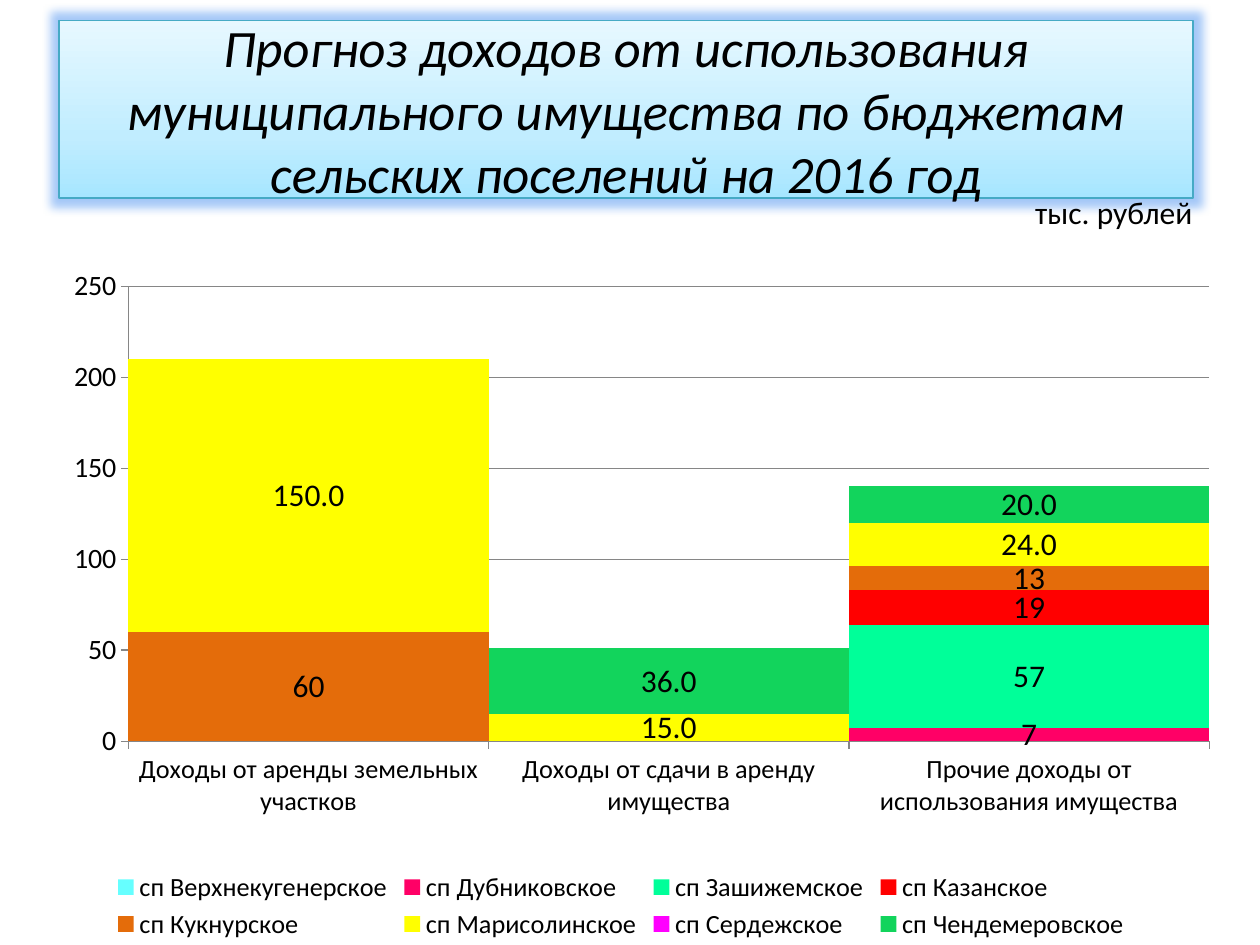
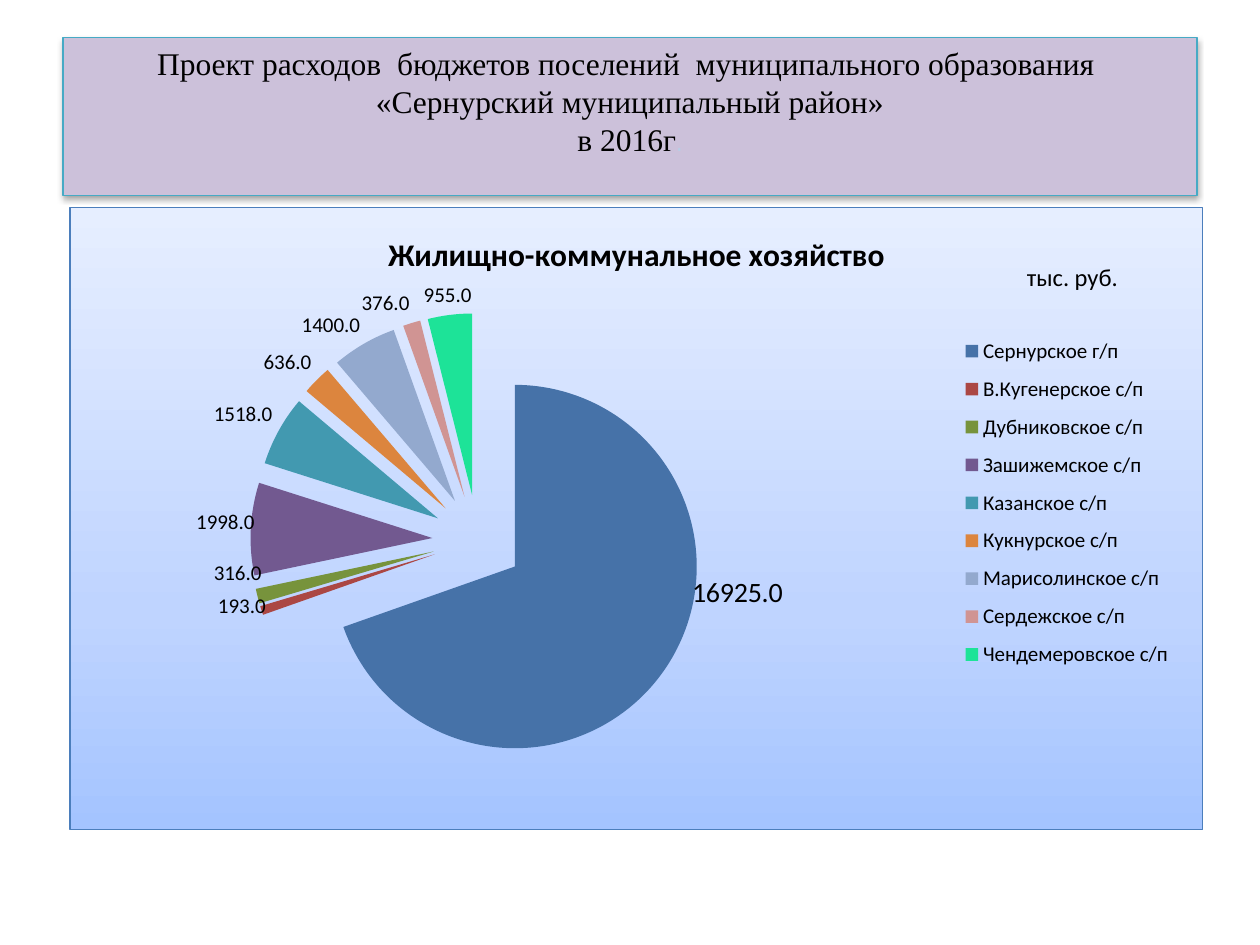
"""Build two budget slides: property income by settlement and housing expenses."""
from lxml import etree
from pptx import Presentation
from pptx.chart.data import CategoryChartData
from pptx.dml.color import RGBColor
from pptx.enum.chart import XL_CHART_TYPE, XL_LABEL_POSITION, XL_LEGEND_POSITION, XL_TICK_MARK
from pptx.enum.text import MSO_ANCHOR, PP_ALIGN
from pptx.oxml import parse_xml
from pptx.oxml.ns import nsdecls, qn
from pptx.util import Cm, Pt

STACKED = XL_CHART_TYPE.COLUMN_STACKED
PIE = XL_CHART_TYPE.PIE
OUTSIDE_END = XL_LABEL_POSITION.OUTSIDE_END
LEGEND_BOTTOM = XL_LEGEND_POSITION.BOTTOM
LEGEND_RIGHT = XL_LEGEND_POSITION.RIGHT
TICK_OUTSIDE = XL_TICK_MARK.OUTSIDE
TOP, MIDDLE = MSO_ANCHOR.TOP, MSO_ANCHOR.MIDDLE
CENTER, LEFT = PP_ALIGN.CENTER, PP_ALIGN.LEFT

BLACK = RGBColor(0x00, 0x00, 0x00)
TEAL = RGBColor(0x46, 0xAA, 0xC5)
LILAC = RGBColor(0xCC, 0xC1, 0xDA)
PALE_BLUE = RGBColor(0xB9, 0xCD, 0xE5)
AXIS_GREY = RGBColor(0x86, 0x86, 0x86)
FRAME_BLUE = RGBColor(0x4B, 0x7E, 0xBC)
SKY_STOPS = [(0, "A7E6FF"), (35, "C1EDFF"), (100, "E7F8FF")]
BLUE_STOPS = [(0, "A4C4FF"), (35, "BFD4FF"), (100, "E6EEFF")]
GLOW = '<a:glow rad="139700"><a:srgbClr val="4A90F0"><a:alpha val="50000"/></a:srgbClr></a:glow>'
SHADOW = ('<a:outerShdw blurRad="39370" dist="22860" dir="5400000" rotWithShape="0">'
          '<a:srgbClr val="000000"><a:alpha val="35000"/></a:srgbClr></a:outerShdw>')

INCOME_SOURCES = ["Доходы от аренды земельных участков",
                  "Доходы от сдачи в аренду имущества",
                  "Прочие доходы от использования имущества"]
INCOME = [
    ("сп Верхнекугенерское", (None, None, None), "66FFFF", "General"),
    ("сп Дубниковское", (None, None, 7), "FF0066", "General"),
    ("сп Зашижемское", (None, None, 57), "00FF99", "General"),
    ("сп Казанское", (None, None, 19), "FF0000", "General"),
    ("сп Кукнурское", (60, None, 13), "E46C0A", "General"),
    ("сп Марисолинское", (150, 15, 24), "FFFF00", "0.0"),
    ("сп Сердежское", (None, None, None), "FF00FF", "General"),
    ("сп Чендемеровское", (None, 36, 20), "12D45C", "0.0"),
]
EXPENSES = [
    ("Сернурское г/п", 16925, "4672A8"),
    ("В.Кугенерское с/п", 193, "AB4744"),
    ("Дубниковское с/п", 316, "77933C"),
    ("Зашижемское с/п", 1998, "725990"),
    ("Казанское с/п", 1518, "4299B0"),
    ("Кукнурское с/п", 636, "DC853E"),
    ("Марисолинское с/п", 1400, "93A9CE"),
    ("Сердежское с/п", 376, "D09493"),
    ("Чендемеровское с/п", 955, "1DE398"),
]
LABEL_SHIFTS = {0: (0.02, -0.16), 1: (0.01, -0.03), 2: (0.01, -0.06),
                3: (0.01, -0.01), 8: (0.02, 0)}


def style_font(font, size, name="Calibri", color=BLACK, bold=False, italic=False):
    """Apply one text format to a font."""
    font.size, font.name = Pt(size), name
    font.bold, font.italic = bold, italic
    font.color.rgb = color


def write(paragraph, text, align=LEFT, **style):
    """Add text to a paragraph, with newlines as line breaks."""
    paragraph.alignment = align
    for index, line in enumerate(text.split("\n")):
        if index:
            paragraph.add_line_break()
        run = paragraph.add_run()
        run.text = line
        style_font(run.font, **style)


def gradient(stops):
    """Return an upward gradient fill element."""
    marks = "".join(f'<a:gs pos="{pos * 1000}"><a:srgbClr val="{color}"/></a:gs>'
                    for pos, color in stops)
    return parse_xml(f'<a:gradFill {nsdecls("a")} rotWithShape="1"><a:gsLst>{marks}</a:gsLst>'
                     '<a:lin ang="16200000" scaled="0"/></a:gradFill>')


def title_band(slide, box, effect, anchor):
    """Place the title as a bordered band and return its first paragraph."""
    band = slide.shapes.title
    band.left, band.top, band.width, band.height = map(Cm, box)
    band.line.color.rgb = TEAL
    band.line.width = Pt(0.75)
    band._element.spPr.append(
        parse_xml(f'<a:effectLst {nsdecls("a")}>{effect}</a:effectLst>'))
    band.text_frame.word_wrap = True
    band.text_frame.vertical_anchor = anchor
    return band.text_frame.paragraphs[0]


def unit_note(slide, text, box, size, wrap):
    """Add the note that names the unit of measure."""
    frame = slide.shapes.add_textbox(*map(Cm, box)).text_frame
    frame.word_wrap = wrap
    write(frame.paragraphs[0], text, size=size)


def add_chart(slide, kind, box, categories, series, size):
    """Add a chart with its base font."""
    data = CategoryChartData()
    data.categories = categories
    for name, values in series:
        data.add_series(name, values)
    chart = slide.shapes.add_chart(kind, *map(Cm, box), data).chart
    style_font(chart.font, size)
    return chart


def add_legend(chart, position, size):
    """Show the legend beside the plot."""
    chart.has_legend = True
    chart.legend.position = position
    chart.legend.include_in_layout = False
    style_font(chart.legend.font, size)


def set_layout(parent, index, inner=False, **places):
    """Give a chart part a manual layout from fractions of the chart."""
    for old in parent.findall(qn("c:layout")):
        parent.remove(old)
    layout = parse_xml(f'<c:layout {nsdecls("c")}><c:manualLayout/></c:layout>')
    settings = {"layoutTarget": "inner"} if inner else {}
    if "w" in places:
        settings.update(xMode="edge", yMode="edge")
    settings.update(places)
    for tag, value in settings.items():
        etree.SubElement(layout[0], qn(f"c:{tag}")).set("val", str(value))
    parent.insert(index, layout)


def style_axis(axis, size):
    """Format an axis line, its ticks and its labels."""
    axis.major_tick_mark = TICK_OUTSIDE
    axis.format.line.color.rgb = AXIS_GREY
    style_font(axis.tick_labels.font, size)


def show_labels(labels, size, number_format):
    """Show values as data labels."""
    labels.show_value = True
    labels.number_format = number_format
    labels.number_format_is_linked = False
    style_font(labels.font, size)


def income_chart(slide):
    """Add the stacked columns of income by settlement."""
    chart = add_chart(slide, STACKED, (0.41, 5.36, 24.21, 13.69), INCOME_SOURCES,
                      [row[:2] for row in INCOME], 18)
    chart.has_title = False
    plot = chart.plots[0]
    plot.gap_width, plot.overlap = 0, 88
    plot.vary_by_categories = False
    for settlement, (_, _, color, number_format) in zip(plot.series, INCOME):
        settlement.format.fill.solid()
        settlement.format.fill.fore_color.rgb = RGBColor.from_string(color)
        show_labels(settlement.data_labels, 18, number_format)
    style_axis(chart.category_axis, 15)
    style_axis(chart.value_axis, 16)
    chart.value_axis.major_gridlines.format.line.color.rgb = AXIS_GREY
    add_legend(chart, LEGEND_BOTTOM, 15)
    set_layout(plot._element.getparent(), 0, inner=True, x=0.09, y=0.03, w=0.9, h=0.67)


def expense_chart(slide):
    """Add the exploded pie of housing expenses."""
    names, amounts, colors = zip(*EXPENSES)
    heading = "Жилищно-коммунальное хозяйство"
    chart = add_chart(slide, PIE, (1.4, 4.17, 22.86, 12.57), names, [(heading, amounts)], 10)
    chart.has_title = True
    write(chart.chart_title.text_frame.paragraphs[0], heading, CENTER, size=18, bold=True)
    plot = chart.plots[0]
    plot.vary_by_categories = True
    expenses = plot.series[0]
    explosion = parse_xml(f'<c:explosion {nsdecls("c")} val="25"/>')
    expenses._element.find(qn("c:tx")).addnext(explosion)
    show_labels(expenses.data_labels, 12, "0.0")
    expenses.data_labels.position = OUTSIDE_END
    for index, color in enumerate(colors):
        settlement = expenses.points[index]
        settlement.format.fill.solid()
        settlement.format.fill.fore_color.rgb = RGBColor.from_string(color)
        if index in LABEL_SHIFTS:
            style_font(settlement.data_label.font, 12 if index else 16)
            settlement.data_label.position = OUTSIDE_END
    for label in expenses._element.iter(qn("c:dLbl")):
        x, y = LABEL_SHIFTS[int(label.find(qn("c:idx")).get("val"))]
        label.insert(1, parse_xml(
            f'<c:numFmt {nsdecls("c")} formatCode="0.0" sourceLinked="0"/>'))
        set_layout(label, 1, x=x, y=y)
    add_legend(chart, LEGEND_RIGHT, 12)
    set_layout(chart.legend._element, 1, x=0.78, y=0.19, w=0.2, h=0.57)
    set_layout(plot._element.getparent(), 0, inner=True, x=0.07, y=0.17, w=0.58, h=0.73)
    frame = parse_xml(
        f'<c:spPr {nsdecls("c", "a")}><a:ln w="9525"><a:solidFill>'
        f'<a:srgbClr val="{FRAME_BLUE}"/></a:solidFill></a:ln></c:spPr>')
    frame.insert(0, gradient(BLUE_STOPS))
    chart._chartSpace.find(qn("c:txPr")).addprevious(frame)


def income_slide(slide):
    """Fill the slide on income from municipal property."""
    title = title_band(slide, (1.19, 0.41, 22.86, 3.58), GLOW, MIDDLE)
    write(title, "Прогноз доходов от использования муниципального имущества "
          "по бюджетам сельских поселений на 2016 год", CENTER, size=30, italic=True)
    slide.shapes.title._element.spPr.find(qn("a:ln")).addprevious(gradient(SKY_STOPS))
    income_chart(slide)
    unit_note(slide, "тыс. рублей", (20.62, 3.76, 4.78, 1.02), 18, True)


def expense_slide(slide):
    """Fill the slide on housing expenses."""
    title = title_band(slide, (1.27, 0.76, 22.86, 3.18), SHADOW, TOP)
    fill = slide.shapes.title.fill
    fill.solid()
    fill.fore_color.rgb = LILAC
    write(title, "Проект расходов  бюджетов поселений  муниципального образования \n"
          "«Сернурский муниципальный район»\nв 2016г", CENTER, size=18, name="Times New Roman")
    write(title, ".", CENTER, size=16.2, name="Arial Narrow", color=PALE_BLUE)
    expense_chart(slide)
    unit_note(slide, "тыс. руб.", (20.45, 5.16, 2.36, 0.86), 14, False)


def main():
    """Build and save the presentation."""
    deck = Presentation()
    deck.slide_width, deck.slide_height = Cm(25.4), Cm(19.05)
    title_only = deck.slide_layouts[5]
    for fill_slide in (income_slide, expense_slide):
        fill_slide(deck.slides.add_slide(title_only))
    deck.save("out.pptx")


if __name__ == "__main__":
    main()
